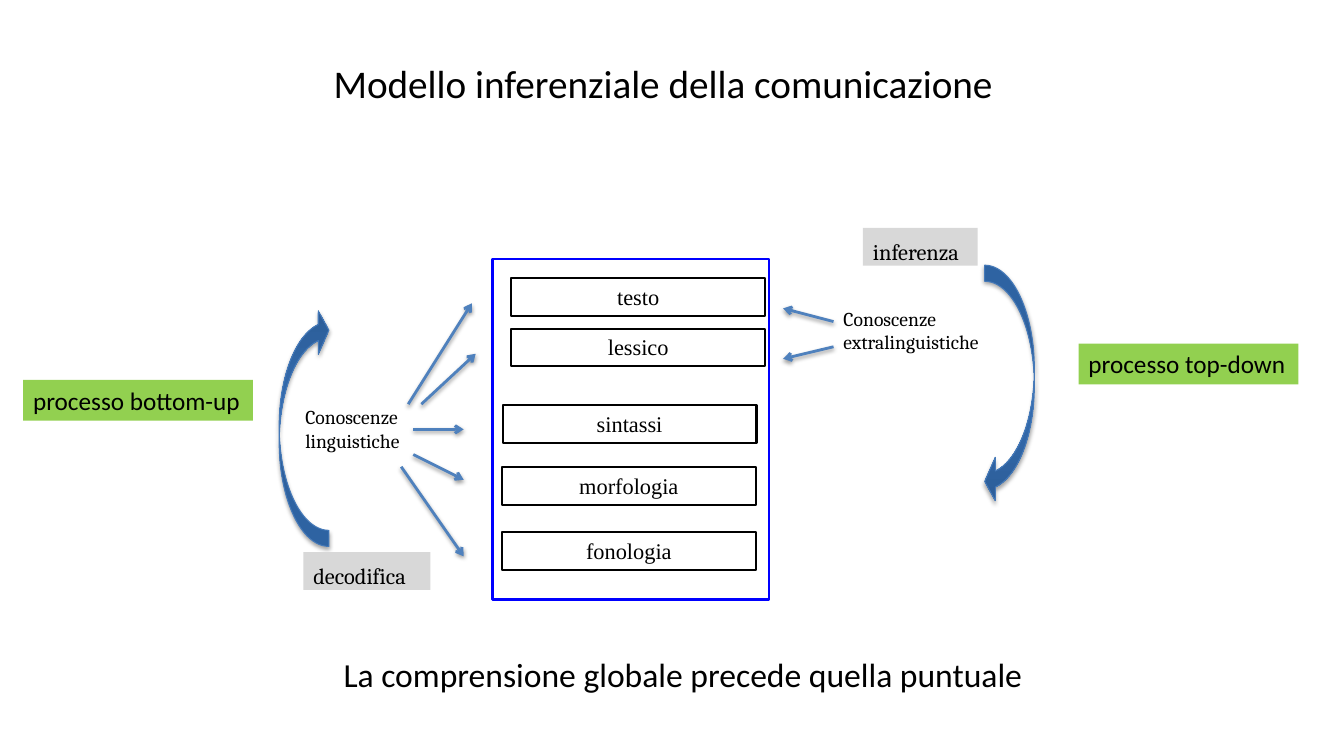
from dataclasses import dataclass

from lxml.etree import SubElement
from pptx import Presentation
from pptx.dml.color import RGBColor
from pptx.enum.shapes import MSO_CONNECTOR, MSO_SHAPE
from pptx.enum.text import MSO_ANCHOR, MSO_AUTO_SIZE, PP_ALIGN
from pptx.oxml import parse_xml
from pptx.oxml.ns import nsdecls, qn
from pptx.shapes.autoshape import Shape
from pptx.slide import Slide
from pptx.util import Pt

BLACK = RGBColor(0x00, 0x00, 0x00)
FRAME_BLUE = RGBColor(0x00, 0x00, 0xFF)
ARROW_BLUE = RGBColor(0x4F, 0x81, 0xBD)
CURVE_EDGE = RGBColor(0x45, 0x79, 0xB8)
GREY = RGBColor(0xD8, 0xD8, 0xD8)
GREEN = RGBColor(0x92, 0xD0, 0x50)
CURVE_STOPS = ((0, "3A7CCB"), (20, "3C7BC7"), (100, "2C5D98"))


@dataclass
class Label:
    text: str
    left: float
    top: float
    width: float
    height: float
    font: str
    size: float
    fill: RGBColor | None = None
    outline: RGBColor | None = None
    align: PP_ALIGN = PP_ALIGN.LEFT
    wrap: bool = True
    inset: float = 3.6


@dataclass
class Arrow:
    start: tuple[float, float]
    end: tuple[float, float]


@dataclass
class Curve:
    left: float
    top: float
    rotation: float


LEVELS = [
    Label(text, left, top, 181.4, 26.9, "Times New Roman", 16,
          outline=BLACK, align=PP_ALIGN.CENTER)
    for text, left, top in (
        ("testo", 365.2, 198.6),
        ("lessico", 365.2, 234.7),
        ("sintassi", 359, 289.3),
        ("morfologia", 358.5, 333.8),
        ("fonologia", 358.5, 380),
    )
]

LABELS = [
    Label("Conoscenze linguistiche", 211, 282.2, 98.6, 54, "Cambria", 14, inset=7.2),
    Label("Conoscenze extralinguistiche", 595.4, 211.7, 133.2, 54, "Cambria", 14, inset=7.2),
    Label("decodifica", 216.8, 394.4, 90.7, 27, "Cambria", 16, GREY, inset=7.2),
    Label("inferenza", 616.4, 162.7, 82, 27, "Cambria", 16, GREY, inset=7.2),
    Label("La comprensione globale precede quella puntuale",
          238.3, 463.7, 504, 36, "Calibri", 24, wrap=False),
    Label("processo bottom-up", 16.6, 271.4, 164, 29, "Calibri", 18, GREEN, wrap=False),
    Label("processo top-down", 770.4, 245.5, 157, 29, "Calibri", 18, GREEN, wrap=False),
]

TITLE = Label("Modello inferenziale della comunicazione",
              231.1, 38.9, 489.6, 41, "Calibri", 28, wrap=False)

ARROWS = [
    Arrow((291.6, 288.7), (337, 216.7)),
    Arrow((301, 288.7), (339.8, 252.7)),
    Arrow((295.2, 306.7), (331.2, 306.7)),
    Arrow((295.2, 324.7), (331.2, 342.7)),
    Arrow((286.6, 333.4), (331.2, 397.4)),
    Arrow((595.4, 229.7), (559.4, 220.3)),
    Arrow((595.4, 247.7), (559.4, 256.3)),
]

CURVES = [Curve(703.4, 189.4, 0), Curve(199.4, 220.3, 180)]


def write_text(shape: Shape, label: Label) -> None:
    frame = shape.text_frame
    frame.text = label.text
    frame.word_wrap = label.wrap
    frame.auto_size = MSO_AUTO_SIZE.NONE
    frame.vertical_anchor = MSO_ANCHOR.TOP
    frame.margin_left = frame.margin_right = Pt(7.2)
    frame.margin_top = frame.margin_bottom = Pt(label.inset)
    paragraph = frame.paragraphs[0]
    paragraph.alignment = label.align
    font = paragraph.runs[0].font
    font.name = label.font
    font.size = Pt(label.size)
    font.color.rgb = BLACK


def paint(shape: Shape, fill: RGBColor | None, outline: RGBColor | None,
          weight: float = 1.5) -> None:
    shape.shadow.inherit = False
    if fill is None:
        shape.fill.background()
    else:
        shape.fill.solid()
        shape.fill.fore_color.rgb = fill
    if outline is None:
        shape.line.fill.background()
    else:
        shape.line.color.rgb = outline
        shape.line.width = Pt(weight)


def add_label(slide: Slide, label: Label) -> None:
    box = tuple(map(Pt, (label.left, label.top, label.width, label.height)))
    if label.fill is None and label.outline is None:
        shape = slide.shapes.add_textbox(*box)
    else:
        shape = slide.shapes.add_shape(MSO_SHAPE.RECTANGLE, *box)
        paint(shape, label.fill, label.outline)
    write_text(shape, label)


def shadow_xml(opacity: int, distance: float) -> str:
    return (
        f'<a:effectLst {nsdecls("a")}>'
        f'<a:outerShdw blurRad="{Pt(3.1)}" dist="{Pt(distance)}" dir="5400000" rotWithShape="0">'
        f'<a:srgbClr val="000000"><a:alpha val="{opacity * 1000}"/></a:srgbClr>'
        '</a:outerShdw></a:effectLst>'
    )


def add_arrow(slide: Slide, arrow: Arrow) -> None:
    connector = slide.shapes.add_connector(
        MSO_CONNECTOR.STRAIGHT, *map(Pt, arrow.start + arrow.end))
    connector.line.color.rgb = ARROW_BLUE
    connector.line.width = Pt(2)
    properties = connector._element.spPr
    SubElement(properties.find(qn("a:ln")), qn("a:tailEnd"), type="arrow")
    properties.append(parse_xml(shadow_xml(38, 1.6)))


def add_curve(slide: Slide, curve: Curve) -> None:
    shape = slide.shapes.add_shape(
        MSO_SHAPE.CURVED_LEFT_ARROW, Pt(curve.left), Pt(curve.top), Pt(35.5), Pt(170))
    for index, value in enumerate((0.324, 0.874, 0.214)):
        shape.adjustments[index] = value
    shape.rotation = curve.rotation
    shape.line.color.rgb = CURVE_EDGE
    shape.line.width = Pt(0.75)
    stops = "".join(
        f'<a:gs pos="{position * 1000}"><a:srgbClr val="{color}"/></a:gs>'
        for position, color in CURVE_STOPS)
    properties = shape._element.spPr
    properties.find(qn("a:ln")).addprevious(parse_xml(
        f'<a:gradFill {nsdecls("a")} rotWithShape="1"><a:gsLst>{stops}</a:gsLst>'
        '<a:lin ang="5400000" scaled="0"/></a:gradFill>'))
    properties.append(parse_xml(shadow_xml(35, 1.8)))


def main() -> None:
    presentation = Presentation()
    presentation.slide_width = Pt(960)
    presentation.slide_height = Pt(540)
    slide = presentation.slides.add_slide(presentation.slide_layouts[5])

    title = slide.shapes.title
    title.left, title.top = Pt(TITLE.left), Pt(TITLE.top)
    title.width, title.height = Pt(TITLE.width), Pt(TITLE.height)
    write_text(title, TITLE)

    for level in LEVELS:
        add_label(slide, level)
    frame = slide.shapes.add_shape(
        MSO_SHAPE.RECTANGLE, Pt(352.1), Pt(185), Pt(197.3), Pt(243.4))
    paint(frame, None, FRAME_BLUE, 2)
    for arrow in ARROWS:
        add_arrow(slide, arrow)
    for curve in CURVES:
        add_curve(slide, curve)
    for label in LABELS:
        add_label(slide, label)

    presentation.save("out.pptx")


if __name__ == "__main__":
    main()
